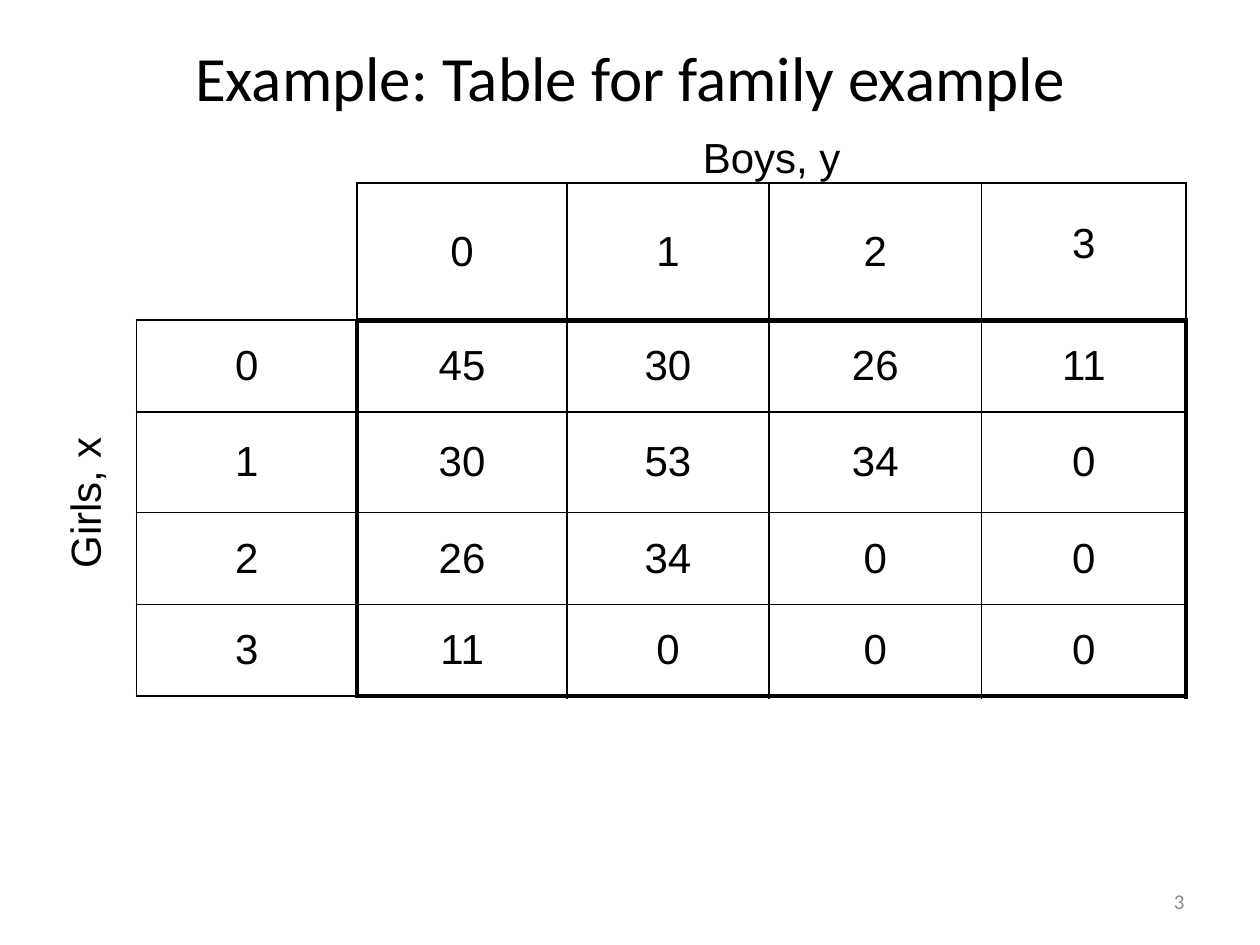
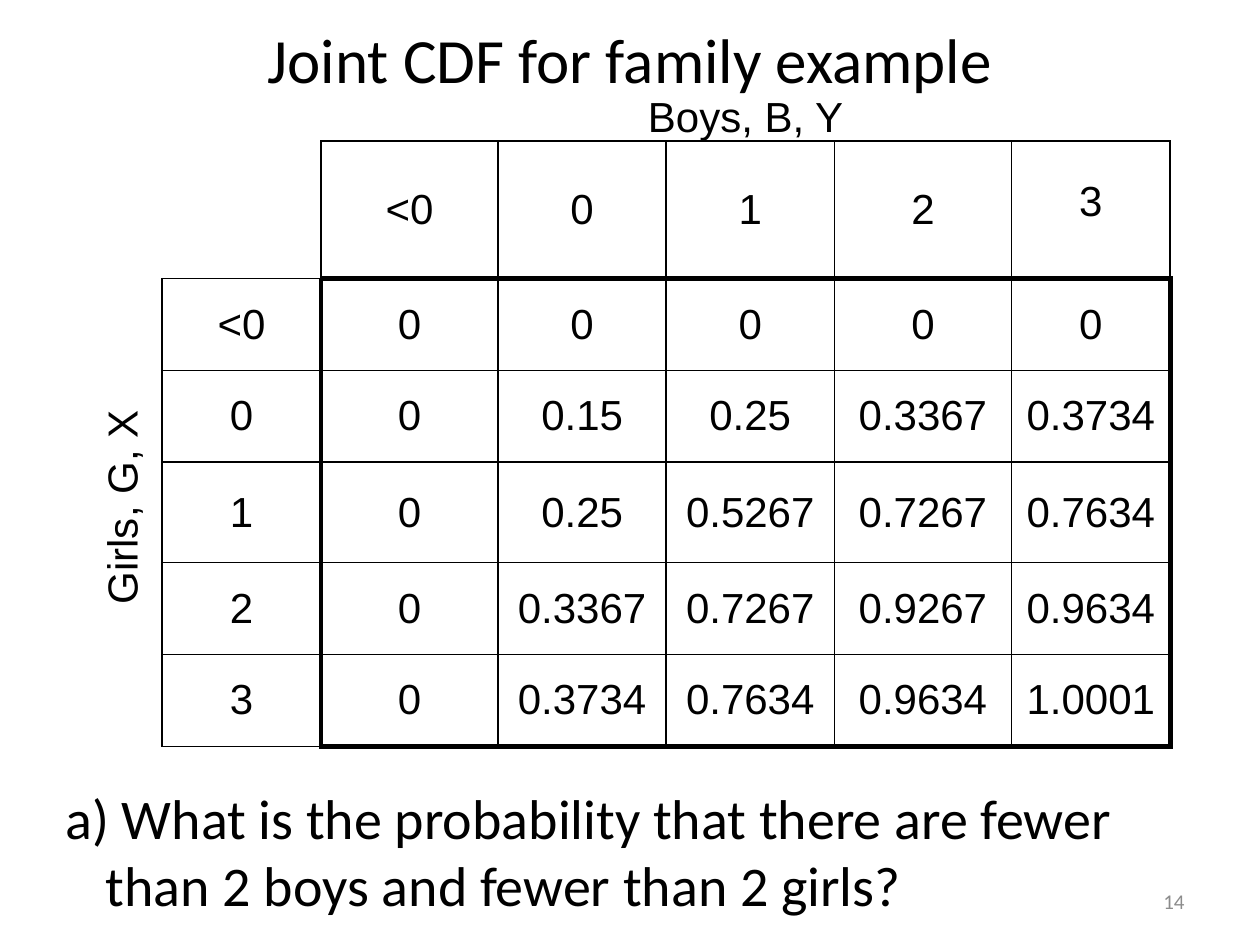
"""Build two slides that show family tables of girls against boys."""
from dataclasses import dataclass

from lxml.etree import SubElement
from pptx import Presentation
from pptx.dml.color import RGBColor as Rgb
from pptx.enum.text import MSO_ANCHOR as Anchor, MSO_AUTO_SIZE as Fit, PP_ALIGN as Align
from pptx.oxml.ns import qn
from pptx.util import Cm, Pt


@dataclass(frozen=True)
class Theme:
    ink: str = "000000"
    gray: str = "8C8C8C"
    head: str = "Calibri"
    grid: str = "Arial"
    title: int = 36
    ask: int = 32
    cell: int = 24
    page: int = 12
    thin: int = 1
    thick: int = 3


THEME = Theme()
PLAIN = "{2D5ABB26-0587-4C30-8999-92F81FD0307C}"
SLIDES = [
    dict(
        title="Example: Table for family example", box=(0, 0.76, 25.4, 1.57),
        boys="Boys, y", girls="Girls, x", keys=["0", "1", "2", "3"],
        body=[
            ["45", "30", "26", "11"],
            ["30", "53", "34", "0"],
            ["26", "34", "0", "0"],
            ["11", "0", "0", "0"],
        ],
        left=1.27, top=2.74, cols=[1.48, 4.45, 4.23, 4.07, 4.29, 4.12],
        ask=None, page="3",
    ),
    dict(
        title="Joint CDF for family example", box=(0, 0, 25.4, 2.34),
        boys="Boys, B, Y", girls="Girls, G, X", keys=["<0", "0", "1", "2", "3"],
        body=[
            ["0", "0", "0", "0", "0"],
            ["0", "0.15", "0.25", "0.3367", "0.3734"],
            ["0", "0.25", "0.5267", "0.7267", "0.7634"],
            ["0", "0.3367", "0.7267", "0.9267", "0.9634"],
            ["0", "0.3734", "0.7634", "0.9634", "1.0001"],
        ],
        left=2.01, top=1.9, cols=[1.26, 3.2, 3.57, 3.39, 3.39, 3.57, 3.2],
        ask="a) What is the probability that there are fewer than 2 boys and fewer than 2 girls?",
        page="14",
    ),
]


def write(frame, text, size, face, color=THEME.ink, align=Align.CENTER):
    frame.text = text
    para = frame.paragraphs[0]
    para.alignment = align
    para.font.size, para.font.name = Pt(size), face
    para.font.color.rgb = Rgb.from_string(color)
    return para


def place(shape, box):
    shape.left, shape.top, shape.width, shape.height = map(Cm, box)


def add_text(slide, box, *style, **more):
    frame = slide.shapes.add_textbox(*map(Cm, box)).text_frame
    frame.word_wrap = True
    return frame, write(frame, *style, **more)


def rule(cell, side, width):
    line = SubElement(cell._tc.get_or_add_tcPr(), qn(f"a:ln{side}"), w=str(Pt(width)))
    fill = SubElement(line, qn("a:solidFill"))
    SubElement(fill, qn("a:srgbClr"), val=THEME.ink)


def frame_cell(cell, row, col, end_row, end_col):
    if row < 1 or col < 1 or row + col < 3:
        return
    bold = {
        "L": row > 1 and col == 2,
        "R": row > 1 and col in (1, end_col),
        "T": col > 1 and row == 2,
        "B": col > 1 and row in (1, end_row),
    }
    for side, heavy in bold.items():
        rule(cell, side, THEME.thick if heavy else THEME.thin)


def add_grid(slide, data):
    keys, cols = data["keys"], data["cols"]
    blank = [""] * (len(keys) - 1)
    rows = [["", "", data["boys"], *blank], ["", "", *keys]]
    rows += [["", key, *line] for key, line in zip(keys, data["body"])]
    rows[2][0] = data["girls"]
    tall = [0.94, 2.77] + [2.03 if key == "1" else 1.85 for key in keys]
    end_row, end_col = len(rows) - 1, len(cols) - 1

    box = data["left"], data["top"], sum(cols), sum(tall)
    table = slide.shapes.add_table(len(rows), len(cols), *map(Cm, box)).table
    table.first_row = table.horz_banding = False
    table._tbl.tblPr.find(qn("a:tableStyleId")).text = PLAIN
    for col, width in zip(table.columns, cols):
        col.width = Cm(width)
    for row, height in zip(table.rows, tall):
        row.height = Cm(height)

    for r, line in enumerate(rows):
        for c, text in enumerate(line):
            cell = table.cell(r, c)
            cell.margin_left = cell.margin_right = Cm(0.18)
            cell.margin_top = cell.margin_bottom = 0
            cell.vertical_anchor = Anchor.MIDDLE if r else Anchor.TOP
            write(cell.text_frame, text, THEME.cell, THEME.grid)
            frame_cell(cell, r, c, end_row, end_col)
            cell.fill.background()

    last = table.cell(1, end_col)
    last.vertical_anchor, last.margin_bottom = Anchor.BOTTOM, Cm(1.07)
    table.cell(0, 2).merge(table.cell(0, end_col))
    side = table.cell(2, 0)
    side.merge(table.cell(end_row, 0))
    side._tc.get_or_add_tcPr().set("vert", "vert270")
    side.text_frame.paragraphs[0]._p.get_or_add_pPr().set("marL", str(Cm(0.2)))


def add_slide(deck, data):
    slide = deck.slides.add_slide(deck.slide_layouts[5])
    title = slide.shapes.title
    place(title, data["box"])
    title.text_frame.auto_size = Fit.NONE
    title.text_frame.vertical_anchor = Anchor.MIDDLE
    write(title.text_frame, data["title"], THEME.title, THEME.head)
    add_grid(slide, data)
    if data["ask"]:
        _, para = add_text(slide, (1.07, 15.67, 23.5, 3), data["ask"],
                           THEME.ask, THEME.head, align=Align.LEFT)
        props = para._p.get_or_add_pPr()
        props.set("marL", str(Cm(0.81)))
        props.set("indent", str(-Cm(0.81)))
    frame, _ = add_text(slide, (18.21, 17.65, 5.92, 1.02), data["page"],
                        THEME.page, THEME.head, THEME.gray, Align.RIGHT)
    frame.vertical_anchor = Anchor.MIDDLE


def main():
    deck = Presentation()
    deck.slide_width, deck.slide_height = Cm(25.4), Cm(19.05)
    for data in SLIDES:
        add_slide(deck, data)
    deck.save("out.pptx")


if __name__ == "__main__":
    main()
